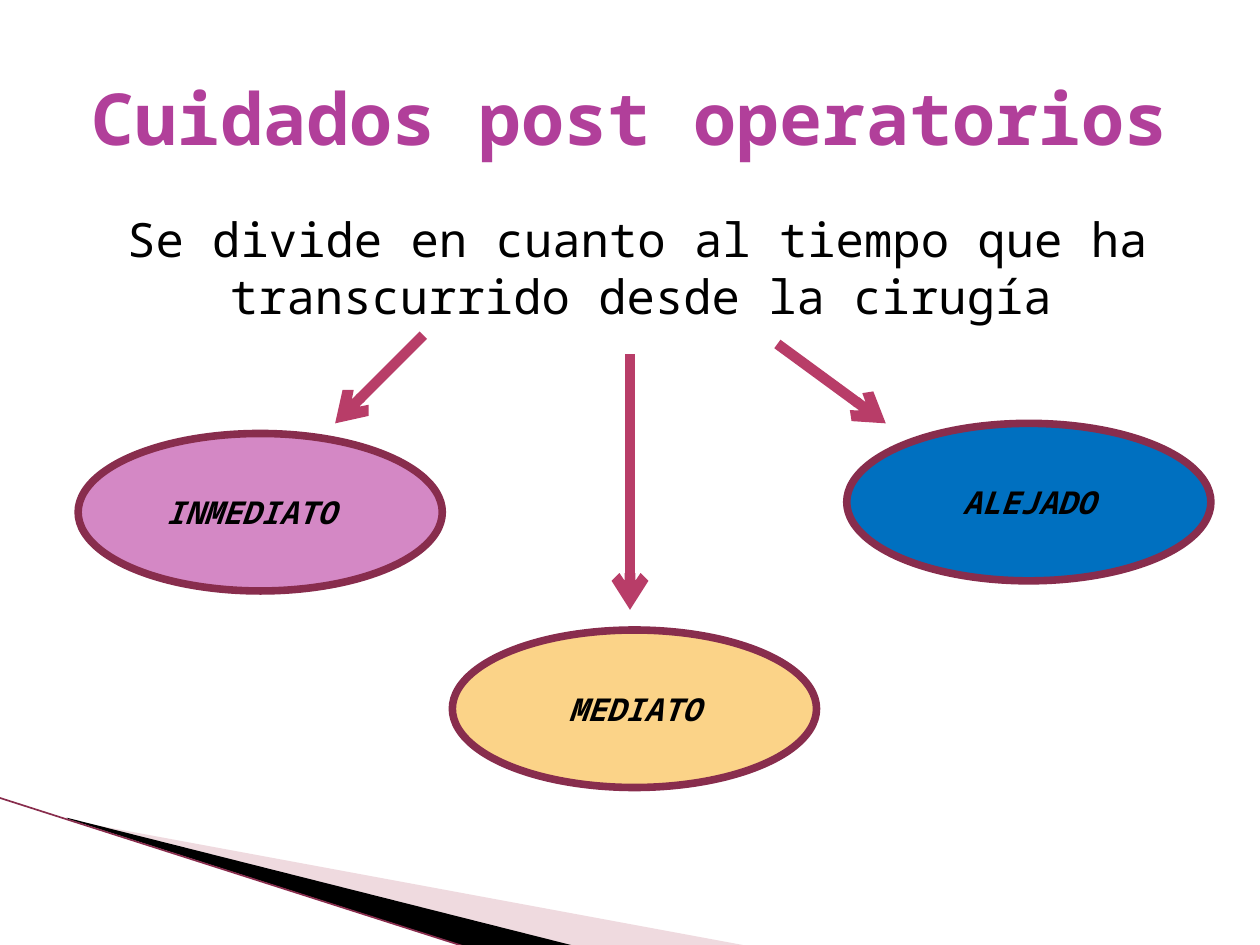
from lxml import etree
from pptx import Presentation
from pptx.dml.color import RGBColor
from pptx.enum import shapes, text
from pptx.oxml.ns import qn
from pptx.util import Inches, Pt

FONT = "Noto Sans Mono"
BLACK = RGBColor(0x00, 0x00, 0x00)
PURPLE = RGBColor(0xB1, 0x3F, 0x9A)
ORCHID = RGBColor(0xD4, 0x88, 0xC5)
AMBER = RGBColor(0xFB, 0xD3, 0x88)
BLUE = RGBColor(0x00, 0x70, 0xC0)
WINE = RGBColor(0x88, 0x2D, 0x4D)
CRIMSON = RGBColor(0xB8, 0x3D, 0x68)
ROSE = RGBColor(0xD8, 0xA3, 0xAF)

# Content
TITLE = "Cuidados post operatorios"
INTRO = "Se divide en cuanto al tiempo que ha transcurrido desde la cirugía "
STAGE_SIZE = (2.89, 1.25)
STAGES = [  # label, left, top, fill
    ("INMEDIATO ", 0.62, 3.44, ORCHID),
    ("MEDIATO", 3.59, 5.0, AMBER),
    ("ALEJADO", 6.72, 3.36, BLUE),
]
ARROWS = [  # start, end
    ((3.36, 2.66), (2.66, 3.36)),
    ((5.0, 2.81), (5.0, 4.84)),
    ((6.17, 2.73), (7.03, 3.36)),
]
WEDGES = [  # corners, fill, opacity in percent
    ([(0.55, 6.51), (5.95, 7.51), (4.56, 7.51), (0.55, 6.5)], ROSE, 40),
    ([(0.53, 6.49), (4.57, 7.51), (3.72, 7.52), (0.54, 6.5)], BLACK, 100),
]
WEDGE_EDGE = ((-0.01, 6.33), (3.71, 7.52))

presentation = Presentation()
presentation.slide_width, presentation.slide_height = Inches(10), Inches(7.5)
slide = presentation.slides.add_slide(presentation.slide_layouts[6])


def write(shape, words, size, color, anchor, bold=False, italic=False):
    frame = shape.text_frame
    frame.word_wrap = True
    frame.vertical_anchor = anchor
    paragraph = frame.paragraphs[0]
    paragraph.text = words
    paragraph.alignment = text.PP_ALIGN.CENTER
    font = paragraph.font
    font.name, font.size, font.bold, font.italic = FONT, Pt(size), bold, italic
    font.color.rgb = color
    return paragraph


def add_line(start, end, color, width, arrow=False):
    points = [Inches(value) for value in start + end]
    line = slide.shapes.add_connector(shapes.MSO_CONNECTOR.STRAIGHT, *points)
    line.line.color.rgb = color
    line.line.width = Pt(width)
    if arrow:
        etree.SubElement(line.line._get_or_add_ln(), qn("a:tailEnd"), type="arrow")
    etree.SubElement(line._element.spPr, qn("a:effectLst"))


# Corner decoration
for corners, fill, opacity in WEDGES:
    points = [(Inches(x), Inches(y)) for x, y in corners]
    builder = slide.shapes.build_freeform(*points[0])
    builder.add_line_segments(points[1:], close=True)
    wedge = builder.convert_to_shape()
    wedge.shadow.inherit = False
    wedge.fill.solid()
    wedge.fill.fore_color.rgb = fill
    wedge.line.fill.background()
    if opacity < 100:
        color = wedge._element.spPr.find(".//" + qn("a:srgbClr"))
        etree.SubElement(color, qn("a:alpha"), val=str(opacity * 1000))
add_line(*WEDGE_EDGE, WINE, 0.95)

# Introduction and title
intro = slide.shapes.add_textbox(Inches(0.5), Inches(1.62), Inches(9), Inches(1.04))
paragraph = write(intro, INTRO, 27, BLACK, text.MSO_ANCHOR.TOP)
properties = paragraph._p.get_or_add_pPr()
properties.set("marL", str(Inches(0.4)))
properties.set("indent", str(Inches(-0.28)))
title = slide.shapes.add_textbox(Inches(0.5), Inches(0.3), Inches(9), Inches(1.25))
write(title, TITLE, 41, PURPLE, text.MSO_ANCHOR.MIDDLE, bold=True)

# Stages
for label, left, top, fill in STAGES:
    box = [Inches(value) for value in (left, top, *STAGE_SIZE)]
    stage = slide.shapes.add_shape(shapes.MSO_SHAPE.OVAL, *box)
    stage.shadow.inherit = False
    stage.fill.solid()
    stage.fill.fore_color.rgb = fill
    stage.line.color.rgb = WINE
    stage.line.width = Pt(4.33)
    write(stage, label, 18, BLACK, text.MSO_ANCHOR.MIDDLE, bold=True, italic=True)

# Arrows to the stages
for start, end in ARROWS:
    add_line(start, end, CRIMSON, 6, arrow=True)

presentation.save("out.pptx")
